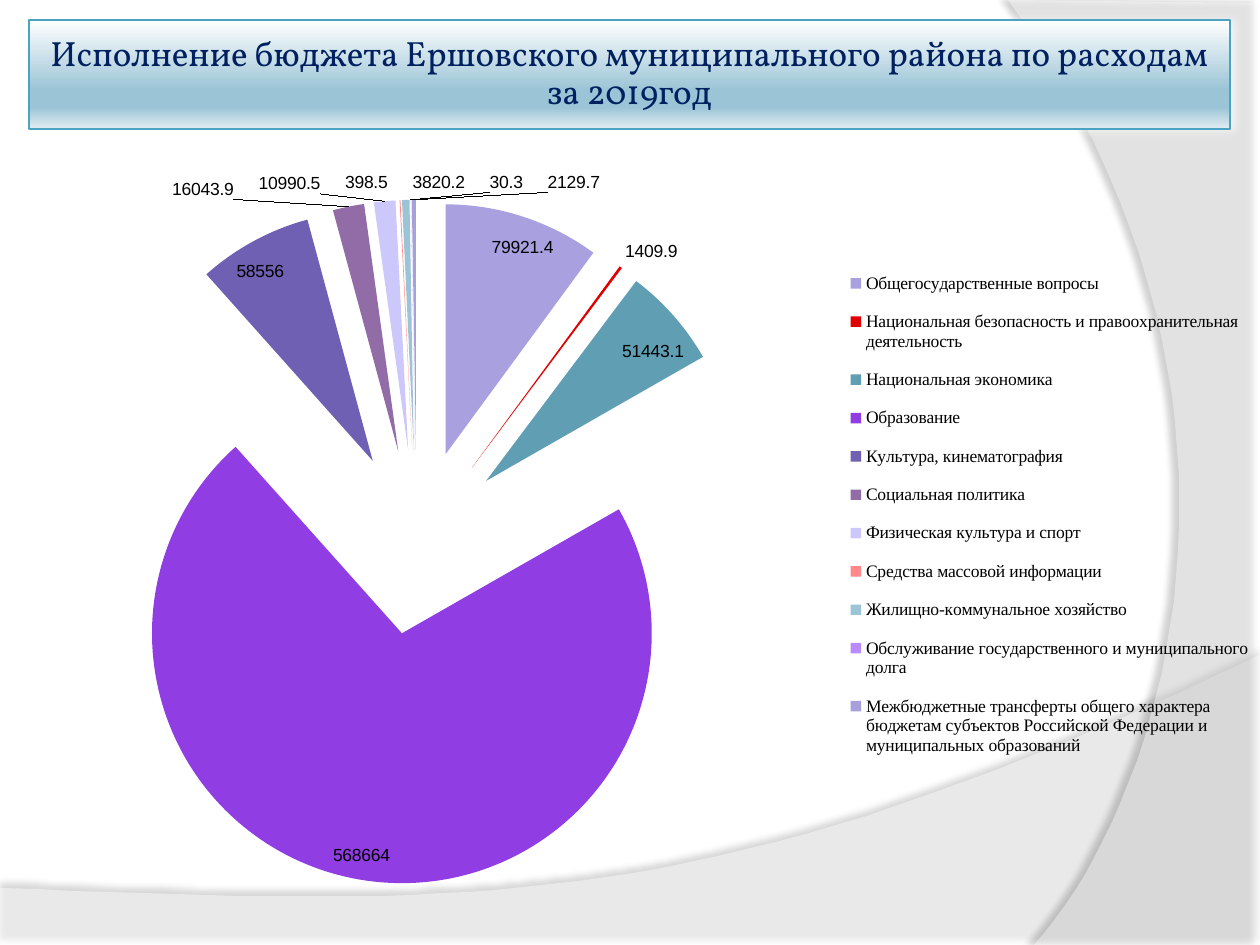
from dataclasses import dataclass
from lxml.etree import SubElement
from pptx import Presentation
from pptx.chart.data import CategoryChartData
from pptx.dml.color import RGBColor as RGB
from pptx.enum.chart import XL_CHART_TYPE as Kind, XL_LABEL_POSITION as Spot
from pptx.enum.chart import XL_LEGEND_POSITION as Side
from pptx.enum.shapes import MSO_SHAPE as Form
from pptx.enum.text import MSO_ANCHOR as Anchor, PP_ALIGN as Align
from pptx.oxml import parse_xml
from pptx.oxml.ns import nsdecls, qn
from pptx.util import Pt

UNIT = 914400 / 126  # EMU in one px


@dataclass(frozen=True)
class Theme:
    white: str = "FFFFFF"
    black: str = "000000"
    navy: str = "002060"
    edge: str = "4BA3C3"
    fade: tuple = ((0, "FFFFFF"), (65, "9BC4D6"), (80, "9BC4D6"), (100, "E1EDF2"))
    head: str = "Vollkorn"
    body: str = "Arial"
    key: str = "Times New Roman"
    big: int = 20
    small: int = 10


T = Theme()

SPEND = [
    ("Общегосударственные вопросы", 79921.4, "A8A0DF"),
    ("Национальная безопасность и правоохранительная деятельность", 1409.9, "E00000"),
    ("Национальная экономика", 51443.1, "609EB4"),
    ("Образование", 568664, "903EE3"),
    ("Культура, кинематография", 58556, "7060B3"),
    ("Социальная политика", 16043.9, "926CA7"),
    ("Физическая культура и спорт", 10990.5, "CCC8FC"),
    ("Средства массовой информации", 398.5, "FF8888"),
    ("Жилищно-коммунальное хозяйство", 3820.2, "9BC4D6"),
    ("Обслуживание государственного и муниципального долга", 30.3, "B98BFF"),
    ("Межбюджетные трансферты общего характера бюджетам субъектов "
     "Российской Федерации и муниципальных образований", 2129.7, "A8A0DB"),
]


def emu(*vals):
    return [round(v * UNIT) for v in vals]


def paint(font, name, size, color):
    font.name, font.size = name, Pt(size)
    font.color.rgb = RGB.from_string(color)


def shade(shape, color, alpha, blur, dist, turn):
    """Give the shape an outer shadow; blur and dist are in points."""
    shape.shadow.inherit = False
    glow = shape._element.spPr.find(qn("a:effectLst"))
    drop = SubElement(glow, qn("a:outerShdw"), blurRad=str(Pt(blur)),
                      dist=str(Pt(dist)), dir=str(turn * 60000),
                      algn="ctr", rotWithShape="0")
    tone = SubElement(drop, qn("a:srgbClr"), val=color)
    SubElement(tone, qn("a:alpha"), val=str(alpha * 1000))


def curve(a, b, c, d, steps=40):
    """Points of a cubic curve, without its start."""
    for i in range(1, steps + 1):
        t = i / steps
        u = 1 - t
        yield tuple(u**3 * p + 3 * u * u * t * q + 3 * u * t * t * r + t**3 * s
                    for p, q, r, s in zip(a, b, c, d))


def add_wave(slide, box, edge, bend, alpha, drop):
    """Draw straight edges, then a curve from the last corner."""
    left, top = box
    pts = edge + list(curve(edge[-1], *bend))
    pts = [(x + left, y + top) for x, y in pts]
    pen = slide.shapes.build_freeform(*pts[0], scale=UNIT)
    pen.add_line_segments(pts[1:], close=True)
    wave = pen.convert_to_shape()
    wave.fill.solid()
    wave.fill.fore_color.rgb = RGB.from_string(T.white)
    tone = wave._element.spPr.find(qn("a:solidFill"))[0]
    SubElement(tone, qn("a:alpha"), val=str(alpha * 1000))
    wave.line.fill.background()
    shade(wave, T.black, *drop)


def add_back(slide, wide, high):
    add_wave(slide, (0, 655), [(0, 233), (0, 291), (wide, 291), (wide, 0)],
             [(704, 264), (493, 251), (0, 233)], 45, (35, 4, 3.5, 270))
    add_wave(slide, (1008, 0), [(252, 3), (252, high), (26, high)],
             [(170, 780), (275, 378), (0, 0)], 40, (45, 4, 4, 180))


def add_head(slide, box, text):
    bar = slide.shapes.add_shape(Form.RECTANGLE, *emu(*box))
    bar.fill.background()
    stops = "".join(f'<a:gs pos="{at * 1000}"><a:srgbClr val="{tone}"/></a:gs>'
                    for at, tone in T.fade)
    props = bar._element.spPr
    props.replace(props.find(qn("a:noFill")), parse_xml(
        f'<a:gradFill {nsdecls("a")} rotWithShape="1"><a:gsLst>{stops}</a:gsLst>'
        '<a:lin ang="5400000" scaled="0"/></a:gradFill>'))
    bar.line.color.rgb = RGB.from_string(T.edge)
    bar.line.width = Pt(0.75)
    shade(bar, T.white, 60, 5, 2, 0)
    frame = bar.text_frame
    frame.text, frame.word_wrap = text, True
    frame.vertical_anchor = Anchor.MIDDLE
    frame.margin_left = frame.margin_right = emu(6)[0]
    frame.margin_top = frame.margin_bottom = emu(6)[0]
    para = frame.paragraphs[0]
    para.alignment, para.line_spacing = Align.CENTER, 0.9
    paint(para.runs[0].font, T.head, T.big, T.navy)


def layout(x, y, w, h, inner=False):
    """Manual layout as shares of the chart's box."""
    mark = '<c:layoutTarget val="inner"/>' if inner else ""
    return parse_xml(
        f'<c:layout {nsdecls("c")}><c:manualLayout>{mark}'
        '<c:xMode val="edge"/><c:yMode val="edge"/>'
        f'<c:x val="{x}"/><c:y val="{y}"/><c:w val="{w}"/><c:h val="{h}"/>'
        '</c:manualLayout></c:layout>')


def add_pie(slide, box, rows):
    data = CategoryChartData()
    data.categories = [name for name, _, _ in rows]
    data.add_series("Series 1", [val for _, val, _ in rows])
    chart = slide.shapes.add_chart(Kind.PIE, *emu(*box), data).chart
    chart.has_title = False
    paint(chart.font, T.body, T.small, T.black)

    area = chart._chartSpace.chart.plotArea
    for old in area.findall(qn("c:layout")):
        area.remove(old)
    area.insert(0, layout(0.03, 0.09, 0.58, 0.87, inner=True))

    plot = chart.plots[0]
    plot.vary_by_categories = True
    pie = plot.series[0]
    pie._element.find(qn("c:tx")).addnext(
        parse_xml(f'<c:explosion {nsdecls("c")} val="37"/>'))
    for i, (_, _, tone) in enumerate(rows):
        fill = pie.points[i].format.fill
        fill.solid()
        fill.fore_color.rgb = RGB.from_string(tone)
    plot.has_data_labels = True
    tags = plot.data_labels
    tags.show_value, tags.position = True, Spot.BEST_FIT
    paint(tags.font, T.body, T.small, T.black)

    chart.has_legend = True
    key = chart.legend
    key.position, key.include_in_layout = Side.RIGHT, False
    paint(key.font, T.key, T.small, T.black)
    node = key._element
    for old in node.findall(qn("c:layout")):
        node.remove(old)
    node.find(qn("c:overlay")).addprevious(layout(0.66, 0.16, 0.34, 0.66))


def main():
    deck = Presentation()
    deck.slide_width, deck.slide_height = emu(1260, 945)
    slide = deck.slides.add_slide(deck.slide_layouts[6])
    add_back(slide, 1260, 945)
    add_pie(slide, (20, 129, 1240, 787), SPEND)
    add_head(slide, (29, 20, 1201, 109),
             "Исполнение бюджета Ершовского муниципального района "
             "по расходам за 2019год")
    deck.save("out.pptx")


if __name__ == "__main__":
    main()
